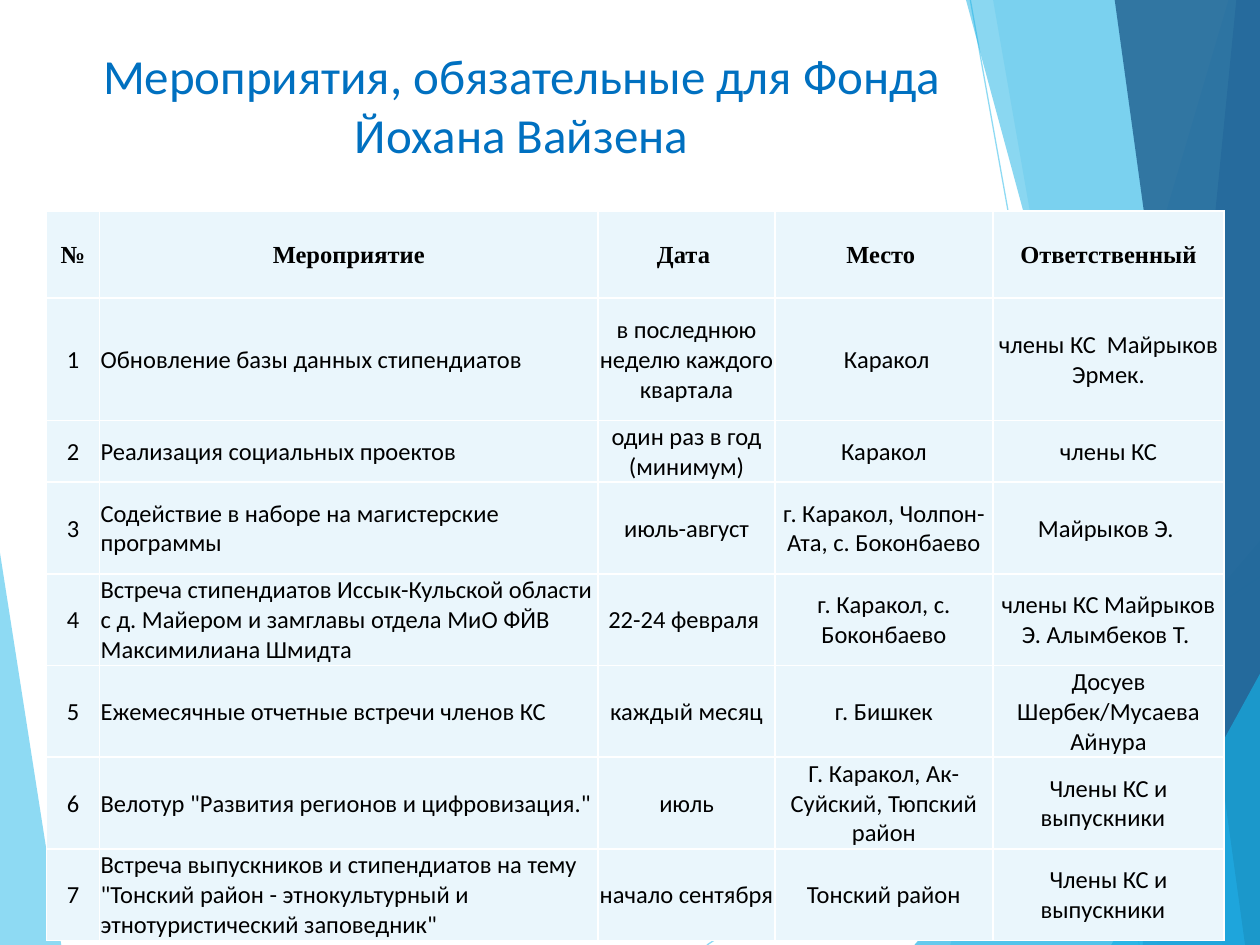
from dataclasses import dataclass

import pptx
import pptx.dml.color
import pptx.enum.shapes
import pptx.enum.text
import pptx.oxml
import pptx.oxml.ns
import pptx.util

Pt = pptx.util.Pt
RGB = pptx.dml.color.RGBColor.from_string
qn = pptx.oxml.ns.qn
ALIGN = pptx.enum.text.PP_ALIGN
ANCHOR = pptx.enum.text.MSO_ANCHOR
A_NS = pptx.oxml.ns.nsdecls("a")


@dataclass(frozen=True)
class Theme:
    sky: str = "5FCBEF"
    cyan: str = "17B0E4"
    blue: str = "2E83C3"
    navy: str = "226292"
    title: str = "0070C0"
    text: str = "000000"
    cell: str = "EAF6FC"
    border: str = "FFFFFF"
    title_size: int = 28
    table_size: int = 14
    body_font: str = "Calibri"
    header_font: str = "Times New Roman"


theme = Theme()
WIDTH, HEIGHT = 720, 540


def set_opacity(shape, percent):
    color = shape._element.spPr.find(".//" + qn("a:srgbClr"))
    color.append(pptx.oxml.parse_xml(f'<a:alpha {A_NS} val="{percent * 1000}"/>'))


def add_run(paragraph, text, size, color, font, bold=False):
    run = paragraph.add_run()
    run.text = text
    run.font.size = Pt(size)
    run.font.name = font
    run.font.bold = bold
    run.font.color.rgb = RGB(color)


deck = pptx.Presentation()
deck.slide_width, deck.slide_height = Pt(WIDTH), Pt(HEIGHT)
slide = deck.slides.add_slide(deck.slide_layouts[6])

# Background: two thin rays and translucent facets
for x1, y1, x2, y2 in [(404, HEIGHT, WIDTH, 329.5), (554.5, 0, 651, HEIGHT)]:
    ray = slide.shapes.add_connector(
        pptx.enum.shapes.MSO_CONNECTOR.STRAIGHT, Pt(x1), Pt(y1), Pt(x2), Pt(y2))
    ray.line.color.rgb = RGB(theme.sky)
    ray.line.width = Pt(0.75)
    set_opacity(ray, 70)
    ray._element.spPr.append(pptx.oxml.parse_xml(f"<a:effectLst {A_NS}/>"))

bottom_right, top_right = (WIDTH, HEIGHT), (WIDTH, 0)
facets = [
    ([(0, 316), (35, HEIGHT), (0, HEIGHT)], theme.sky, 70),
    ([(702, 0), (543, HEIGHT), bottom_right, top_right], theme.sky, 36),
    ([(567.5, 0), (661.5, HEIGHT), bottom_right, top_right], theme.sky, 20),
    ([(522.5, HEIGHT), (WIDTH, 309), bottom_right], theme.cyan, 66),
    ([(552, 0), (698.5, HEIGHT), bottom_right, top_right], theme.cyan, 50),
    ([(706.5, 0), (653, HEIGHT), bottom_right, top_right], theme.blue, 70),
    ([(637, 0), (711.5, HEIGHT), bottom_right, top_right], theme.navy, 82),
    ([(635, HEIGHT), (WIDTH, 385), bottom_right], theme.cyan, 66),
]
for corners, color, opacity in facets:
    start, *others = [(Pt(x), Pt(y)) for x, y in corners]
    outline = slide.shapes.build_freeform(*start)
    outline.add_line_segments(others, close=True)
    facet = outline.convert_to_shape()
    facet.fill.solid()
    facet.fill.fore_color.rgb = RGB(color)
    facet.line.fill.background()
    facet.shadow.inherit = False
    set_opacity(facet, opacity)

# Title
title = slide.shapes.add_textbox(Pt(48), Pt(22.5), Pt(500), Pt(88)).text_frame
title.word_wrap = True
title.vertical_anchor = ANCHOR.TOP
title.paragraphs[0].alignment = ALIGN.CENTER
add_run(title.paragraphs[0], "Мероприятия, обязательные для Фонда Йохана Вайзена",
        theme.title_size, theme.title, theme.body_font)

# Table of events
events = [
    ("№", "Мероприятие", "Дата ", "Место ", "Ответственный"),
    ("1", "Обновление базы данных стипендиатов", "в последнюю неделю каждого квартала",
     " Каракол", "члены КС  Майрыков Эрмек."),
    ("2", "Реализация социальных проектов", "один раз в год (минимум)", "Каракол", "члены КС"),
    ("3", "Содействие в наборе на магистерские программы", "июль-август",
     "г. Каракол, Чолпон-Ата, с. Боконбаево", "Майрыков Э. "),
    ("4", "Встреча стипендиатов Иссык-Кульской области с д. Майером и замглавы "
     "отдела МиО ФЙВ Максимилиана Шмидта", "22-24 февраля ",
     "г. Каракол, с. Боконбаево", "члены КС Майрыков Э. Алымбеков Т. "),
    ("5", "Ежемесячные отчетные встречи членов КС", "каждый месяц", "г. Бишкек",
     "Досуев Шербек/Мусаева Айнура"),
    ("6", 'Велотур "Развития регионов и цифровизация."', "июль",
     "Г. Каракол, Ак-Суйский, Тюпский район", "Члены КС и выпускники  "),
    ("7", 'Встреча выпускников и стипендиатов на тему "Тонский район - '
     'этнокультурный и этнотуристический заповедник"', "начало сентября",
     "Тонский район", "Члены КС и выпускники  "),
]
column_widths = [30.25, 285, 101, 124.5, 132.25]
row_heights = [49.7, 70, 35.2] + [52.4] * 5
EVENT_COLUMN = 1

schedule = slide.shapes.add_table(
    len(events), len(column_widths), Pt(26.6), Pt(120.7),
    Pt(sum(column_widths)), Pt(sum(row_heights))).table
schedule.first_row = schedule.horz_banding = False
for column, width in zip(schedule.columns, column_widths):
    column.width = Pt(width)

for r, (event, height) in enumerate(zip(events, row_heights)):
    schedule.rows[r].height = Pt(height)
    header = r == 0
    for c, text in enumerate(event):
        cell = schedule.cell(r, c)
        cell.margin_left = cell.margin_right = cell.margin_top = Pt(0.7)
        cell.margin_bottom = 0
        cell.vertical_anchor = ANCHOR.MIDDLE
        cell.fill.solid()
        cell.fill.fore_color.rgb = RGB(theme.cell)
        for position, side in enumerate("LRTB"):
            cell._tc.tcPr.insert(position, pptx.oxml.parse_xml(
                f'<a:ln{side} {A_NS} w="{Pt(1)}"><a:solidFill>'
                f'<a:srgbClr val="{theme.border}"/></a:solidFill></a:ln{side}>'))
        paragraph = cell.text_frame.paragraphs[0]
        left_aligned = c == EVENT_COLUMN and not header
        paragraph.alignment = ALIGN.LEFT if left_aligned else ALIGN.CENTER
        add_run(paragraph, text, theme.table_size, theme.text,
                theme.header_font if header else theme.body_font, bold=header)

deck.save("out.pptx")
